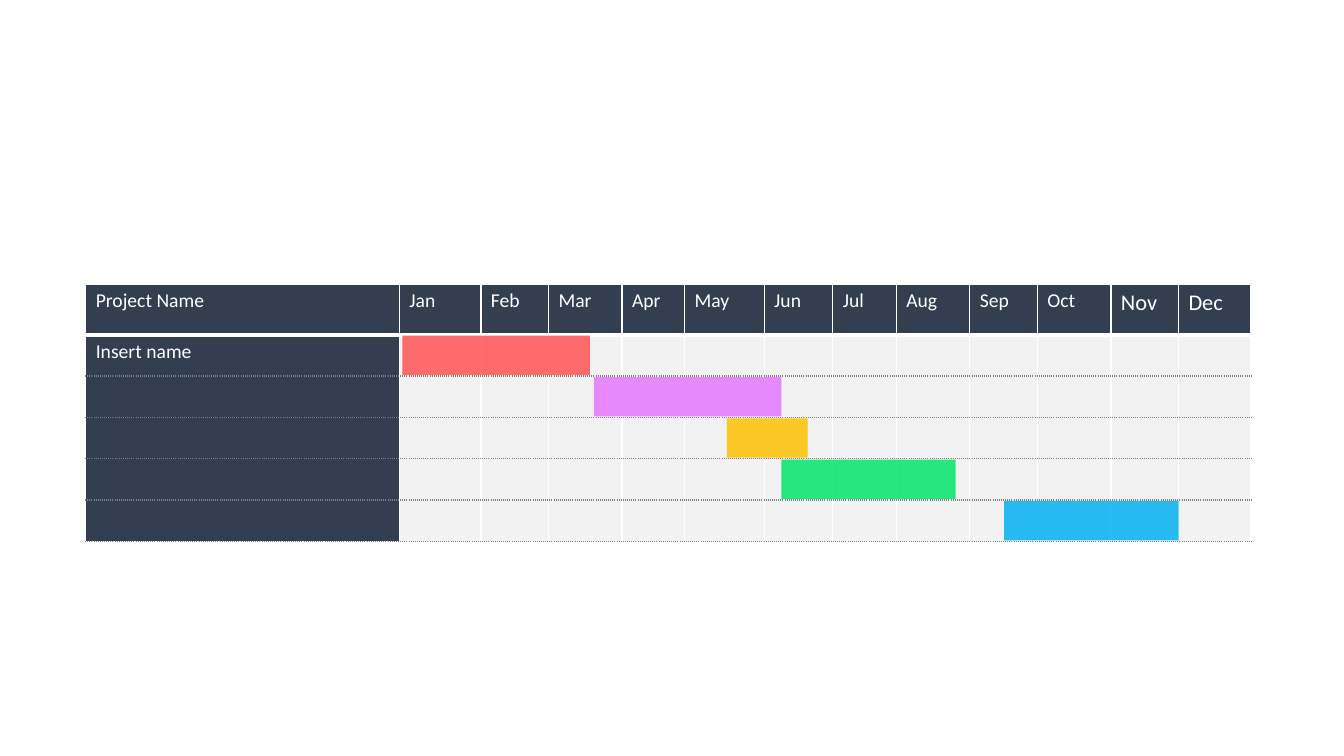
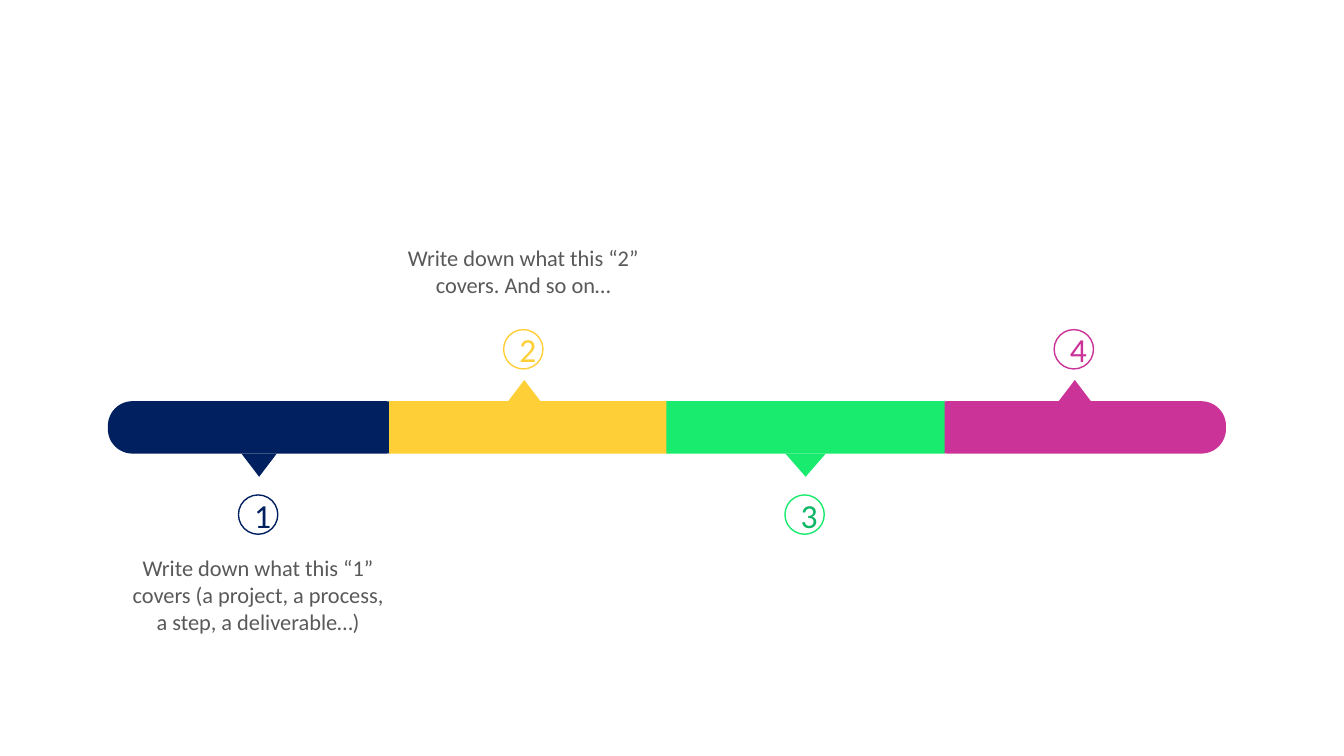
from lxml import etree
from pptx import Presentation
from pptx.dml.color import RGBColor
from pptx.enum.shapes import MSO_SHAPE
from pptx.enum.text import MSO_ANCHOR, PP_ALIGN
from pptx.oxml.ns import qn
from pptx.util import Inches, Pt

# Shared look
FONT = "Calibri"
WHITE = RGBColor(0xFF, 0xFF, 0xFF)
SLATE = RGBColor(0x33, 0x3F, 0x50)
PALE = RGBColor(0xF2, 0xF2, 0xF2)
GREY = RGBColor(0x80, 0x80, 0x80)
INK = RGBColor(0x59, 0x59, 0x59)
RED = RGBColor(0xFF, 0x50, 0x50)
VIOLET = RGBColor(0xE5, 0x75, 0xFF)
AMBER = RGBColor(0xFF, 0xC0, 0x00)
LEAF = RGBColor(0x00, 0xE6, 0x68)
SKY = RGBColor(0x00, 0xB0, 0xF0)
NAVY = RGBColor(0x00, 0x20, 0x60)
GOLD = RGBColor(0xFF, 0xCF, 0x37)
MINT = RGBColor(0x19, 0xEB, 0x6E)
FERN = RGBColor(0x0D, 0xB7, 0x66)
PLUM = RGBColor(0xCC, 0x33, 0x99)
RECT, ROUND = MSO_SHAPE.RECTANGLE, MSO_SHAPE.ROUNDED_RECTANGLE
OVAL, WEDGE = MSO_SHAPE.OVAL, MSO_SHAPE.ISOSCELES_TRIANGLE
LEFT, CENTER = PP_ALIGN.LEFT, PP_ALIGN.CENTER
TOP, MIDDLE = MSO_ANCHOR.TOP, MSO_ANCHOR.MIDDLE

# Project plan: month, column width, text size
MONTHS = [("Jan", 0.81, 14), ("Feb", 0.67, 14), ("Mar", 0.73, 14),
          ("Apr", 0.62, 14), ("May", 0.79, 14), ("Jun", 0.68, 14),
          ("Jul", 0.63, 14), ("Aug", 0.73, 14), ("Sep", 0.67, 14),
          ("Oct", 0.73, 14), ("Nov", 0.67, 16), ("Dec", 0.72, 16)]
HEADS = [("Project Name", 3.11, 14)] + MONTHS
NAMES = ["Insert name", "", "", "", ""]
# One bar per row: left, width, colour
BARS = [(3.99, 1.86, RED), (5.89, 1.86, VIOLET), (7.21, 0.8, AMBER),
        (7.75, 1.73, LEAF), (9.96, 1.73, SKY)]
PLAN_X, PLAN_Y, HEAD_H, ROW_H, BAR_H = 0.85, 2.82, 0.5, 0.41, 0.39

# Timeline: pointer centre, pointer width, colour, digit colour, side, note
STEPS = [
    (2.57, 0.35, NAVY, NAVY, "below",
     "Write down what this “1” covers (a project, a process, a step, a deliverable…)"),
    (5.2, 0.35, GOLD, GOLD, "above",
     "Write down what this “2” covers. And so on…"),
    (7.99, 0.4, MINT, FERN, "below", ""),
    (10.66, 0.35, PLUM, PLUM, "above", ""),
]
# Tops of pointer, circle and note on each side; turn of the pointer
SIDES = {"above": (3.77, 3.27, 2.37, 0), "below": (4.5, 4.91, 5.45, 180)}
BAND_X, BAND_Y, BAND_H, END_W, PART_W = 1.07, 3.98, 0.52, 3, 2.76
DOT, TIP_H, NOTE_W = 0.39, 0.23, 2.74


def write(frame, text, size=14, color=WHITE, align=LEFT, anchor=TOP):
    frame.word_wrap = True
    frame.vertical_anchor = anchor
    para = frame.paragraphs[0]
    para.alignment = align
    run = para.add_run()
    run.text = text
    run.font.name, run.font.size = FONT, Pt(size)
    run.font.color.rgb = color


def draw(slide, kind, x, y, w, h, fill, line=None, alpha=None):
    shape = slide.shapes.add_shape(kind, *map(Inches, (x, y, w, h)))
    shape.shadow.inherit = False
    shape.fill.solid()
    shape.fill.fore_color.rgb = fill
    if line is None:
        shape.line.fill.background()
    else:
        shape.line.color.rgb, shape.line.width = line, Pt(1)
    if alpha:
        tint = shape.fill._xPr.find(".//" + qn("a:srgbClr"))
        etree.SubElement(tint, qn("a:alpha"), val=str(alpha * 1000))
    return shape


def edge(cell, sides):
    # Cell borders must come first, in the order L, R, T, B
    props = cell._tc.get_or_add_tcPr()
    for place, (side, (color, width, dash)) in enumerate(sides.items()):
        line = etree.Element(qn("a:ln" + side), w=str(Pt(width)))
        paint = etree.SubElement(line, qn("a:solidFill"))
        etree.SubElement(paint, qn("a:srgbClr"), val=str(color))
        etree.SubElement(line, qn("a:prstDash"), val=dash)
        props.insert(place, line)


def plan(slide):
    total = sum(width for _, width, _ in HEADS)
    height = HEAD_H + ROW_H * len(NAMES)
    table = slide.shapes.add_table(
        len(NAMES) + 1, len(HEADS),
        *map(Inches, (PLAN_X, PLAN_Y, total, height))).table
    table.first_row = table.horz_banding = False
    thin, thick, dots = (WHITE, 1, "solid"), (WHITE, 3, "solid"), (GREY, 1, "sysDot")
    rules = [thin, thick] + [dots] * len(NAMES)

    # Grid
    for row, line in enumerate(table.rows):
        line.height = Inches(ROW_H if row else HEAD_H)
        for col, cell in enumerate(line.cells):
            cell.fill.solid()
            cell.fill.fore_color.rgb = PALE if row and col else SLATE
            edge(cell, {"L": thin, "R": thin, "T": rules[row], "B": rules[row + 1]})

    # Headings and names
    for col, (text, width, size) in enumerate(HEADS):
        table.columns[col].width = Inches(width)
        write(table.cell(0, col).text_frame, text, size=size)
    for row, text in enumerate(NAMES, 1):
        if text:
            write(table.cell(row, 0).text_frame, text)

    # Bars
    for row, (x, width, color) in enumerate(BARS):
        y = PLAN_Y + HEAD_H + row * ROW_H + 0.01
        draw(slide, RECT, x, y, width, BAR_H, color, alpha=84)


def timeline(slide):
    # Band: rounded ends, then the two middle parts over them
    middle = BAND_X + END_W - 0.21
    parts = [(ROUND, BAND_X, END_W, NAVY), (ROUND, 9.16, END_W, PLUM),
             (RECT, middle, PART_W, GOLD), (RECT, middle + PART_W - 0.01, PART_W, MINT)]
    for kind, x, width, color in parts:
        part = draw(slide, kind, x, BAND_Y, width, BAND_H, color)
        if kind == ROUND:
            part.adjustments[0] = 0.47

    # Pointers, numbers and notes
    for number, (mid, wide, color, ink, side, note) in enumerate(STEPS, 1):
        tip_y, dot_y, note_y, turn = SIDES[side]
        tip = draw(slide, WEDGE, mid - wide / 2, tip_y, wide, TIP_H, color)
        tip.rotation = turn
        dot = draw(slide, OVAL, mid - DOT / 2 - 0.01, dot_y, DOT, DOT, WHITE, line=color)
        write(dot.text_frame, str(number), size=24, color=ink, align=CENTER, anchor=MIDDLE)
        if note:
            box = slide.shapes.add_textbox(
                *map(Inches, (mid - NOTE_W / 2 - 0.01, note_y, NOTE_W, 0.64)))
            write(box.text_frame, note, size=16, color=INK, align=CENTER)


def main():
    deck = Presentation()
    deck.slide_width, deck.slide_height = Inches(13.33), Inches(7.5)
    for build in (plan, timeline):
        build(deck.slides.add_slide(deck.slide_layouts[6]))
    deck.save("out.pptx")


if __name__ == "__main__":
    main()
